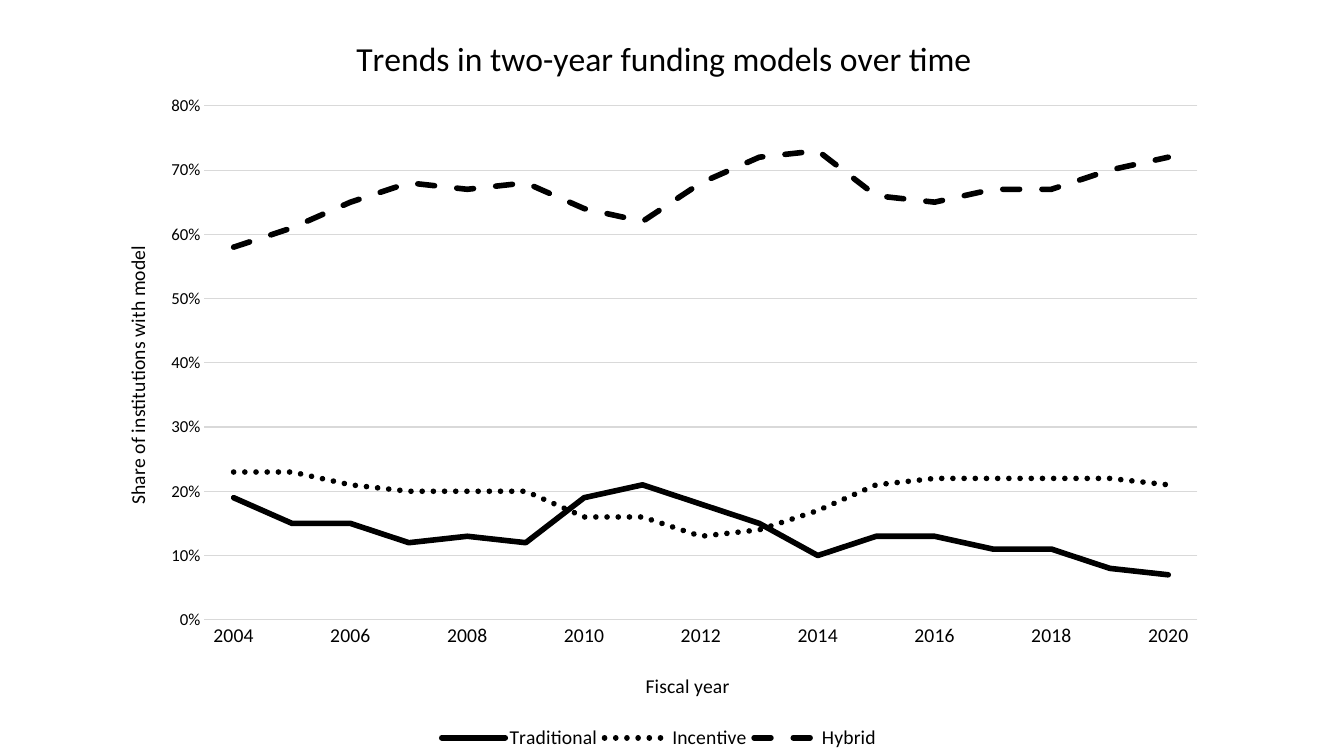
from lxml import etree
from pptx import Presentation
from pptx import util as u
from pptx.chart import data as chart_data
from pptx.dml import color
from pptx.enum import chart as kinds, dml
from pptx.oxml import ns

COLORS = {"ink": "000000", "grid": "D9D9D9"}
FONT = "Calibri"
YEARS = [str(year) if year % 2 == 0 else "" for year in range(2004, 2021)]
MODELS = {
    "Traditional": (dml.MSO_LINE.SOLID, [
        0.19, 0.15, 0.15, 0.12, 0.13, 0.12, 0.19, 0.21, 0.18,
        0.15, 0.10, 0.13, 0.13, 0.11, 0.11, 0.08, 0.07]),
    "Incentive": (dml.MSO_LINE.ROUND_DOT, [
        0.23, 0.23, 0.21, 0.20, 0.20, 0.20, 0.16, 0.16, 0.13,
        0.14, 0.17, 0.21, 0.22, 0.22, 0.22, 0.22, 0.21]),
    "Hybrid": (dml.MSO_LINE.DASH, [
        0.58, 0.61, 0.65, 0.68, 0.67, 0.68, 0.64, 0.62, 0.68,
        0.72, 0.73, 0.66, 0.65, 0.67, 0.67, 0.70, 0.72]),
}


def rgb(name):
    """Return a named colour."""
    return color.RGBColor.from_string(COLORS[name])


def style_font(font, size):
    """Set the common font at the given size."""
    for key, value in {"name": FONT, "size": u.Pt(size), "bold": False}.items():
        setattr(font, key, value)
    font.color.rgb = rgb("ink")


def style_line(line, name, width):
    """Give a line its colour and width."""
    line.color.rgb = rgb(name)
    line.width = u.Pt(width)


def place(element, index, **fractions):
    """Position a chart part by fractions of the chart area."""
    for old in element.findall(ns.qn("c:layout")):
        element.remove(old)
    layout = etree.Element(ns.qn("c:layout"))
    manual = etree.SubElement(layout, ns.qn("c:manualLayout"))
    if element.tag == ns.qn("c:plotArea"):
        etree.SubElement(manual, ns.qn("c:layoutTarget"), val="inner")
    for side in ("x", "y"):
        etree.SubElement(manual, ns.qn(f"c:{side}Mode"), val="edge")
    for key, value in fractions.items():
        etree.SubElement(manual, ns.qn(f"c:{key}"), val=str(value))
    element.insert(index, layout)


def add_title(title, words, size, x, y, rotation=0):
    """Write and place a chart or axis title."""
    frame = title.text_frame
    para = frame.paragraphs[0]
    style_font(para.font, size)
    span = para.add_run()
    span.text = words
    style_font(span.font, size)
    body = frame._txBody.find(ns.qn("a:bodyPr"))
    body.set("rot", str(rotation * 60000))
    body.set("vert", "horz")
    place(title._element, 1, x=x, y=y)


def style_axes(chart):
    """Format both axes, their titles and the gridlines."""
    years, shares = chart.category_axis, chart.value_axis
    for axis, size in ((years, 14), (shares, 12)):
        axis.major_tick_mark = axis.minor_tick_mark = kinds.XL_TICK_MARK.NONE
        style_font(axis.tick_labels.font, size)
    years.has_major_gridlines = False
    style_line(years.format.line, "grid", 0.75)
    add_title(years.axis_title, "Fiscal year", 14, 0.485, 0.885)
    for key, value in {"minimum_scale": 0, "maximum_scale": 0.8,
                       "major_unit": 0.1, "has_major_gridlines": True}.items():
        setattr(shares, key, value)
    shares.tick_labels.number_format = "0%"
    shares.tick_labels.number_format_is_linked = False
    shares.format.line.fill.background()
    style_line(shares.major_gridlines.format.line, "grid", 0.75)
    add_title(shares.axis_title, "Share of institutions with model", 14,
              0.02, 0.32, -90)


def style_series(plot):
    """Draw each funding model as a plain line with its own dash."""
    plot.vary_by_categories = False
    for series in plot.series:
        line = series.format.line
        style_line(line, "ink", 4)
        line.dash_style = MODELS[series.name][0]
        series.format.line._ln.set("cap", "rnd")
        series.smooth = False
        series.marker.style = kinds.XL_MARKER_STYLE.NONE


def add_trend_chart(page, box):
    """Add the funding model line chart in the given box."""
    values = chart_data.CategoryChartData(number_format="0%")
    values.categories = YEARS
    for name, (_, shares) in MODELS.items():
        values.add_series(name, shares)
    chart = page.shapes.add_chart(
        kinds.XL_CHART_TYPE.LINE, *map(u.Inches, box), values).chart
    style_font(chart.font, 10)
    chart.has_title = True
    add_title(chart.chart_title, "Trends in two-year funding models over time",
              24, 0.225, 0.04)
    style_axes(chart)
    style_series(chart.plots[0])
    chart.has_legend = True
    legend = chart.legend
    legend.position = kinds.XL_LEGEND_POSITION.BOTTOM
    legend.include_in_layout = False
    style_font(legend.font, 14)
    place(legend._element, 1, x=0.3, y=0.96, w=0.4, h=0.04)
    plot_area = chart._chartSpace.find(".//" + ns.qn("c:plotArea"))
    place(plot_area, 0, x=0.095, y=0.14, w=0.885, h=0.68)


def main():
    """Build the deck and save it."""
    deck = Presentation()
    deck.slide_width, deck.slide_height = u.Inches(13.33), u.Inches(7.5)
    page = deck.slides.add_slide(deck.slide_layouts[6])
    add_trend_chart(page, (0.97, 0, 11.13, 7.5))
    deck.save("out.pptx")


if __name__ == "__main__":
    main()
